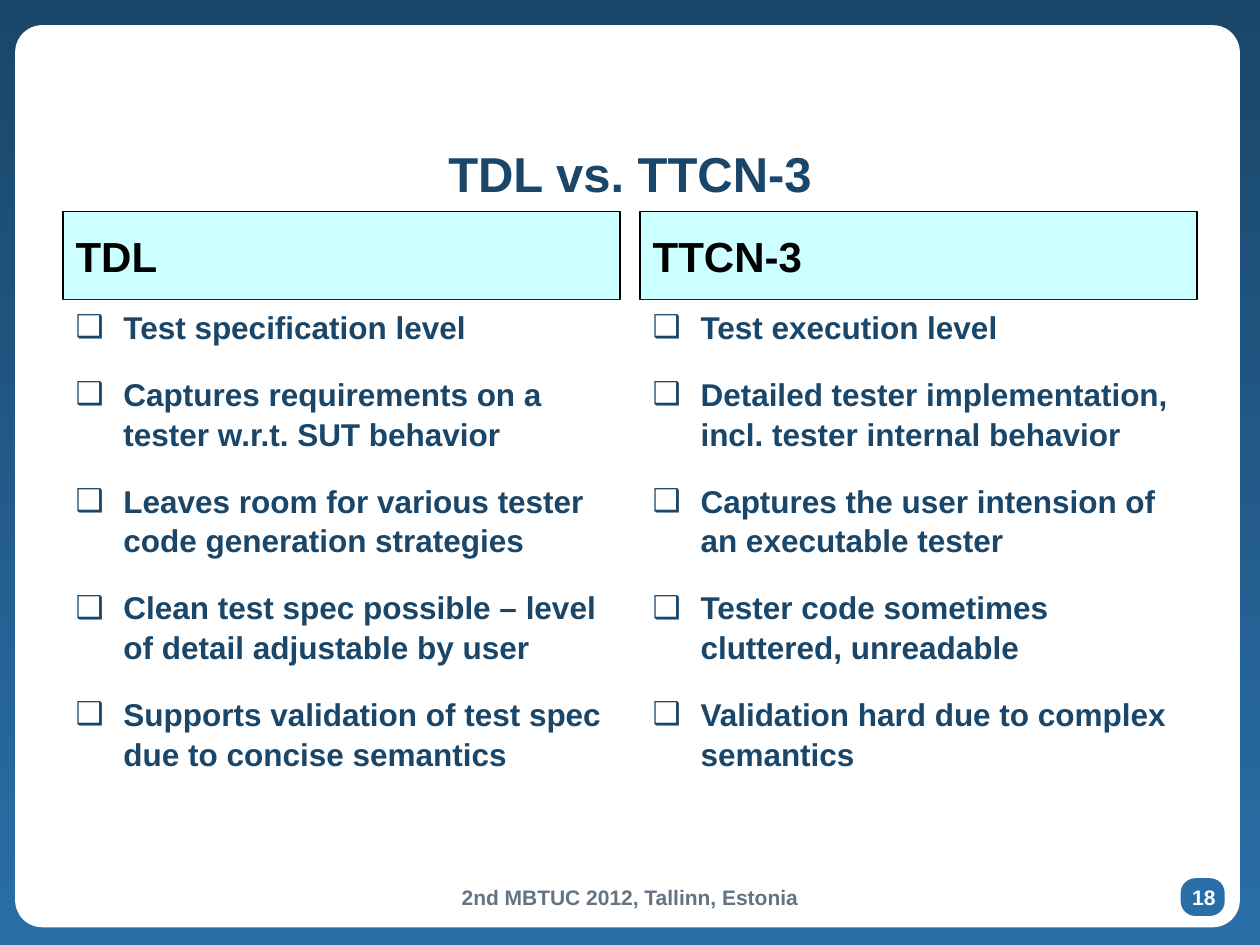
from lxml.etree import SubElement
from pptx import Presentation
from pptx.dml.color import RGBColor
from pptx.enum.shapes import MSO_SHAPE as Shape
from pptx.enum.text import MSO_ANCHOR as Anchor, MSO_AUTO_SIZE as AutoSize, PP_ALIGN as Align
from pptx.oxml.ns import qn
from pptx.util import Inches, Pt

THEME = {
    "font": "Arial",
    "navy": RGBColor.from_string("1A4669"),
    "blue": RGBColor.from_string("2A6EA8"),
    "white": RGBColor.from_string("FFFFFF"),
    "black": RGBColor.from_string("000000"),
    "grey": RGBColor.from_string("637381"),
    "cyan": RGBColor.from_string("CCFFFF"),
    "title": 28,
    "heading": 24,
    "bullet": 18,
    "small": 12,
}
WIDTH, HEIGHT = 10, 7.5
MARGIN, GUTTER = 0.5, 0.16
COLUMN = (WIDTH - 2 * MARGIN - GUTTER) / 2
HEAD_TOP, HEAD_ROW, LIST_ROW = 1.68, 0.7, 4.32
INDENT = 0.38


def place(part, left, top, width, height):
    part.left, part.top = Inches(left), Inches(top)
    part.width, part.height = Inches(width), Inches(height)


def write(part, *lines, size, color, align=Align.LEFT, anchor=Anchor.TOP, bullet=None):
    frame = part.text_frame
    frame.word_wrap = True
    frame.auto_size = AutoSize.NONE
    frame.vertical_anchor = anchor
    for number, line in enumerate(lines):
        paragraph = frame.add_paragraph() if number else frame.paragraphs[0]
        paragraph.alignment = align
        paragraph.space_before = Pt(0.2 * THEME[size] if number else 0)
        if bullet:
            paragraph.space_after = Pt(12)
            paragraph.line_spacing = 1.05
            props = paragraph._p.get_or_add_pPr()
            props.set("marL", str(Inches(INDENT)))
            props.set("indent", str(-Inches(INDENT)))
            SubElement(props, qn("a:buFont")).set("typeface", THEME["font"])
            SubElement(props, qn("a:buChar")).set("char", bullet)
        run = paragraph.add_run()
        run.text = line
        run.font.name = THEME["font"]
        run.font.size = Pt(THEME[size])
        run.font.bold = True
        run.font.color.rgb = THEME[color]


deck = Presentation()
deck.slide_width, deck.slide_height = Inches(WIDTH), Inches(HEIGHT)
slide = deck.slides.add_slide(deck.slide_layouts[4])

backdrop = slide.background.fill
backdrop.gradient()
backdrop.gradient_angle = 270
for stop, color, position in zip(backdrop.gradient_stops, ("navy", "blue"), (0, 1)):
    stop.color.rgb = THEME[color]
    stop.position = position

title, *column_parts = slide.placeholders
tree = title._element.getparent()

panels = [
    ((0.12, 0.2, 9.72, 7.16), 0.03, "white"),
    ((9.37, 6.97, 0.35, 0.3), 0.39, "blue"),
]
for layer, (box, rounding, color) in enumerate(panels, start=2):
    panel = slide.shapes.add_shape(Shape.ROUNDED_RECTANGLE, *map(Inches, box))
    panel.adjustments[0] = rounding
    panel.shadow.inherit = False
    panel.fill.solid()
    panel.fill.fore_color.rgb = THEME[color]
    panel.line.fill.background()
    tree.insert(layer, panel._element)

place(title, 0.35, 1.04, WIDTH - 0.7, 0.67)
write(title, "TDL vs. TTCN-3", size="title", color="navy", align=Align.CENTER, anchor=Anchor.MIDDLE)

comparison = {
    "TDL": [
        "Test specification level",
        "Captures requirements on a tester w.r.t. SUT behavior",
        "Leaves room for various tester code generation strategies",
        "Clean test spec possible – level of detail adjustable by user",
        "Supports validation of test spec due to concise semantics",
    ],
    "TTCN-3": [
        "Test execution level",
        "Detailed tester implementation, incl. tester internal behavior",
        "Captures the user intension of an executable tester",
        "Tester code sometimes cluttered, unreadable",
        "Validation hard due to complex semantics",
    ],
}
for index, (language, traits) in enumerate(comparison.items()):
    heading, points = column_parts[2 * index:2 * index + 2]
    left = MARGIN + index * (COLUMN + GUTTER)
    place(heading, left, HEAD_TOP, COLUMN, HEAD_ROW)
    place(points, left, HEAD_TOP + HEAD_ROW, COLUMN, LIST_ROW)
    for part, color in ((heading, "cyan"), (points, "white")):
        part.fill.solid()
        part.fill.fore_color.rgb = THEME[color]
    heading.line.color.rgb = THEME["black"]
    heading.line.width = Pt(0.75)
    write(heading, language, size="heading", color="black", anchor=Anchor.MIDDLE)
    write(points, *traits, size="bullet", color="navy", bullet="❑")

footers = [
    ("2nd MBTUC 2012, Tallinn, Estonia", (1.99, 6.97, 6.02, 0.32), "grey"),
    ("18", (9.3, 6.97, 0.51, 0.27), "white"),
]
for words, box, color in footers:
    footer = slide.shapes.add_textbox(*map(Inches, box))
    write(footer, words, size="small", color=color, align=Align.CENTER)

deck.save("out.pptx")
